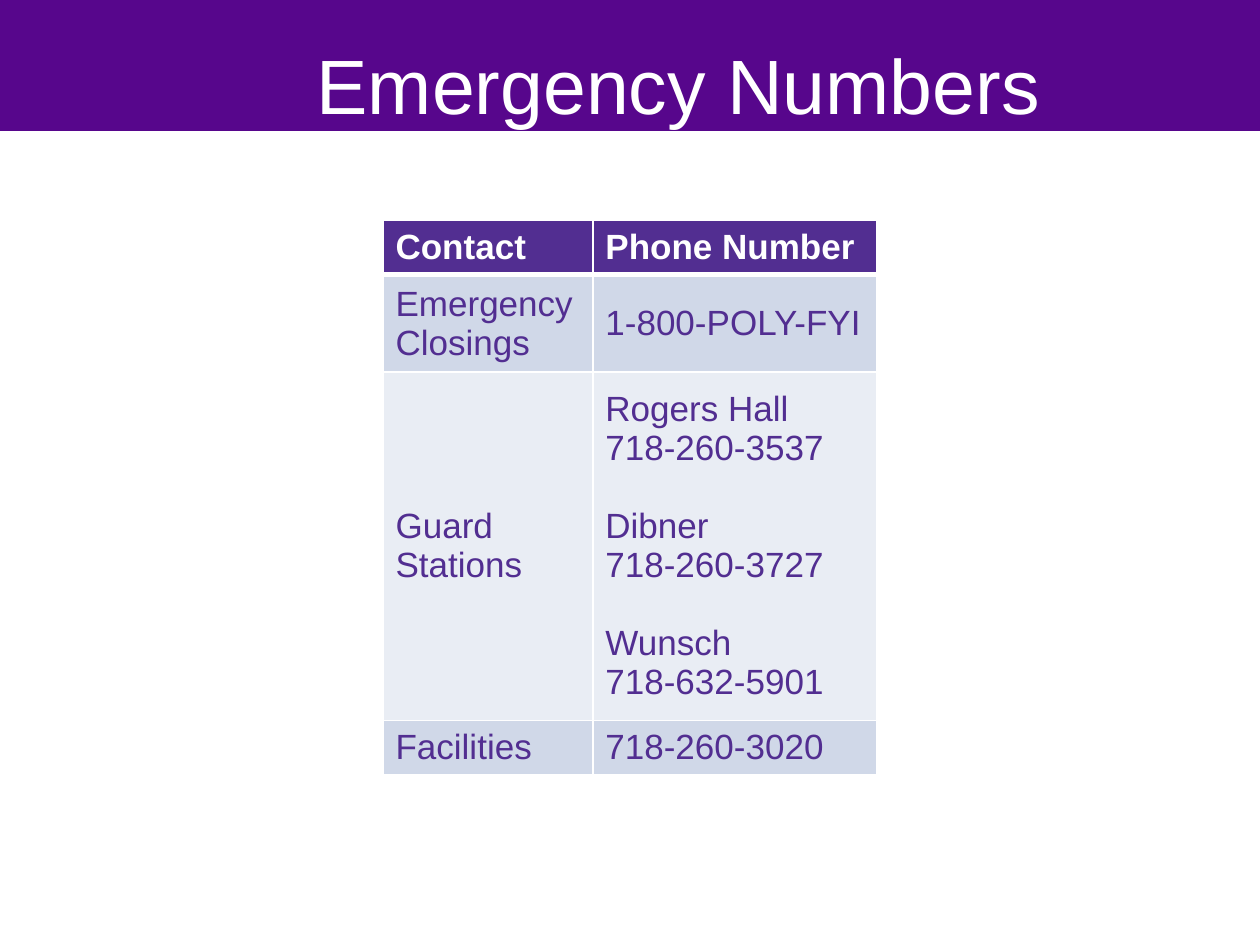
from lxml import etree
from pptx import Presentation
from pptx.dml.color import RGBColor
from pptx.enum.shapes import MSO_SHAPE
from pptx.enum.text import MSO_ANCHOR, PP_ALIGN
from pptx.oxml.ns import qn
from pptx.util import Cm, Pt

RECTANGLE = MSO_SHAPE.RECTANGLE
TOP, MIDDLE = MSO_ANCHOR.TOP, MSO_ANCHOR.MIDDLE
LEFT = PP_ALIGN.LEFT
TITLE_ONLY_LAYOUT = 5

COLORS = {
    "band": "57068C",
    "header": "522E91",
    "text": "522E91",
    "odd_row": "D0D8E8",
    "even_row": "E9EDF4",
    "white": "FFFFFF",
}
ROWS = [
    ("Contact", "Phone Number"),
    ("Emergency Closings", "1-800-POLY-FYI"),
    ("Guard Stations", [
        "Rogers Hall", "718-260-3537",
        "Dibner", "718-260-3727",
        "Wunsch", "718-632-5901",
    ]),
    ("Facilities", "718-260-3020"),
]


def color(name):
    return RGBColor.from_string(COLORS[name])


def write_text(frame, text, *, font, size, fill, bold=False, group=None, gap=0):
    """Write one paragraph per line, with a gap before each later group of lines."""
    lines = [text] if isinstance(text, str) else text
    for index, line in enumerate(lines):
        paragraph = frame.add_paragraph() if index else frame.paragraphs[0]
        paragraph.text = line
        paragraph.alignment = LEFT
        if group and index and index % group == 0:
            paragraph.space_before = Pt(gap)
        paragraph.font.name = font
        paragraph.font.size = Pt(size)
        paragraph.font.bold = bold
        paragraph.font.color.rgb = color(fill)


def set_borders(cell, top, bottom):
    """Draw white cell borders; top and bottom are widths in points."""
    properties = cell._tc.get_or_add_tcPr()
    widths = {"lnL": 1, "lnR": 1, "lnT": top, "lnB": bottom}
    for index, (side, width) in enumerate(widths.items()):
        line = etree.Element(qn(f"a:{side}"), w=str(Pt(width)))
        fill = etree.SubElement(line, qn("a:solidFill"))
        etree.SubElement(fill, qn("a:srgbClr"), val=COLORS["white"])
        properties.insert(index, line)


class SlideBuilder:
    font = "Arial"
    title_size = 44
    table_size = 20

    def __init__(self, slide):
        self.slide = slide

    def add_band(self, width, height):
        shape = self.slide.shapes.add_shape(RECTANGLE, 0, 0, width, height)
        shape.shadow.inherit = False
        shape.fill.solid()
        shape.fill.fore_color.rgb = color("band")
        shape.line.fill.background()
        # Send the band behind the title placeholder.
        self.slide.shapes._spTree.insert(2, shape._element)

    def add_title(self, text, left, top, width, height):
        title = self.slide.shapes.title
        title.left, title.top, title.width, title.height = left, top, width, height
        frame = title.text_frame
        frame.vertical_anchor = TOP
        frame.margin_top = Cm(0.12)
        write_text(frame, text, font=self.font, size=self.title_size, fill="white")

    def add_table(self, rows, left, top, widths, heights):
        table = self.slide.shapes.add_table(
            len(rows), len(widths), left, top, sum(widths), sum(heights)).table
        for column, width in zip(table.columns, widths):
            column.width = width
        for row_index, (values, height) in enumerate(zip(rows, heights)):
            table.rows[row_index].height = height
            for column_index, value in enumerate(values):
                self.fill_cell(table.cell(row_index, column_index), value, row_index)

    def fill_cell(self, cell, value, row_index):
        is_header = row_index == 0
        background = "header" if is_header else "odd_row" if row_index % 2 else "even_row"
        cell.fill.solid()
        cell.fill.fore_color.rgb = color(background)
        cell.vertical_anchor = MIDDLE
        set_borders(cell, top=3 if row_index == 1 else 1, bottom=3 if is_header else 1)
        write_text(cell.text_frame, value, font=self.font, size=self.table_size,
                   fill="white" if is_header else "text", bold=is_header,
                   group=2, gap=22.3)


def main():
    presentation = Presentation()
    presentation.slide_width = Cm(25.4)
    presentation.slide_height = Cm(19.05)
    layout = presentation.slide_layouts[TITLE_ONLY_LAYOUT]
    builder = SlideBuilder(presentation.slides.add_slide(layout))
    builder.add_band(presentation.slide_width, Cm(2.64))
    builder.add_title("Emergency Numbers", Cm(6.13), Cm(0.64), Cm(15.88), Cm(3.18))
    builder.add_table(ROWS, Cm(7.72), Cm(4.45),
                      widths=[Cm(4.23), Cm(5.72)],
                      heights=[Cm(1.09), Cm(1.96), Cm(7.02), Cm(1.09)])
    presentation.save("out.pptx")


if __name__ == "__main__":
    main()
